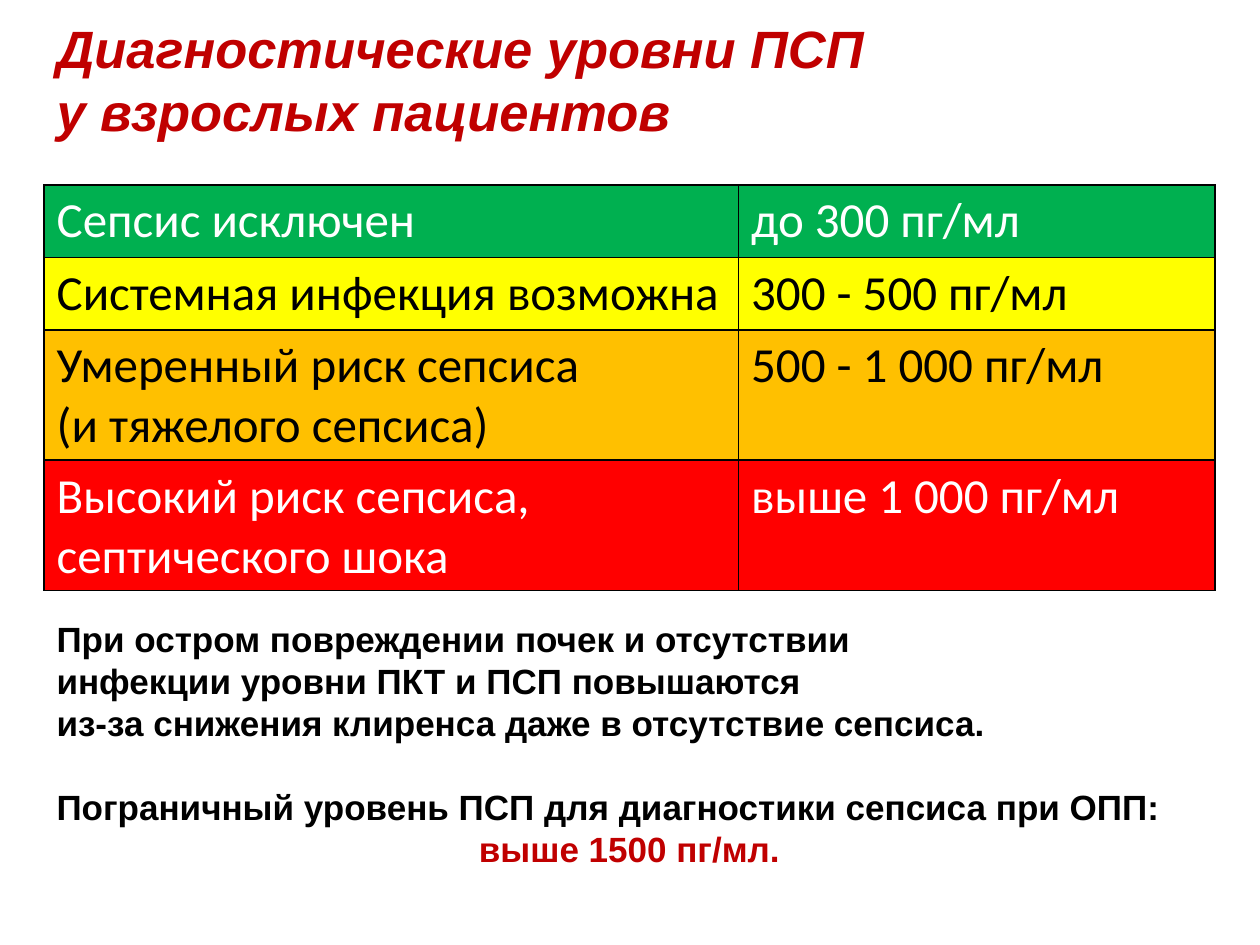
from lxml import etree
from pptx import Presentation
from pptx.dml.color import RGBColor
from pptx.enum.text import MSO_ANCHOR, PP_ALIGN
from pptx.oxml.ns import qn
from pptx.util import Cm, Pt

MIDDLE = MSO_ANCHOR.MIDDLE
TOP = MSO_ANCHOR.TOP
CENTER = PP_ALIGN.CENTER

COLORS = {
    "green": "00B050",
    "yellow": "FFFF00",
    "orange": "FFC000",
    "red": "FF0000",
    "accent": "C00000",
    "black": "000000",
    "white": "FFFFFF",
}

LEFT = Cm(0.89)
CONTENT_WIDTH = Cm(23.6)
COLUMN_WIDTHS = (Cm(14), Cm(9.6))
ONE_LINE, TWO_LINES = Cm(1.46), Cm(2.62)

# Risk level, PSP range, row height, fill, text colour
LEVELS = [
    ("Сепсис исключен", "до 300 пг/мл", ONE_LINE, "green", "white"),
    ("Системная инфекция возможна", "300 - 500 пг/мл", ONE_LINE, "yellow", "black"),
    ("Умеренный риск сепсиса\n(и тяжелого сепсиса)", "500 - 1 000 пг/мл",
     TWO_LINES, "orange", "black"),
    ("Высокий риск сепсиса, септического шока", "выше 1 000 пг/мл",
     TWO_LINES, "red", "white"),
]

NOTES = "\n".join([
    "При остром повреждении почек и отсутствии",
    "инфекции уровни ПКТ и ПСП повышаются",
    "из-за снижения клиренса даже в отсутствие сепсиса.",
    "Пограничный уровень ПСП для диагностики сепсиса при ОПП:",
    "выше 1500 пг/мл.",
])


def rgb(name):
    return RGBColor.from_string(COLORS[name])


def format_text(frame, font, size, color, bold=False, italic=False):
    for para in frame.paragraphs:
        for span in para.runs:
            span.font.name = font
            span.font.size = Pt(size)
            span.font.bold = bold
            span.font.italic = italic
            span.font.color.rgb = rgb(color)


def add_text(page, text, top, width, height, size, color, anchor=TOP, italic=False):
    box = page.shapes.add_textbox(LEFT, top, width, height)
    frame = box.text_frame
    frame.word_wrap = True
    frame.vertical_anchor = anchor
    frame.text = text
    format_text(frame, "Arial", size, color, bold=True, italic=italic)
    return frame


def add_borders(cell):
    properties = cell._tc.get_or_add_tcPr()
    for index, side in enumerate(("a:lnL", "a:lnR", "a:lnT", "a:lnB")):
        line = etree.Element(qn(side), w=str(Pt(1)))
        fill = etree.SubElement(line, qn("a:solidFill"))
        etree.SubElement(fill, qn("a:srgbClr"), val=COLORS["black"])
        properties.insert(index, line)


def add_levels_table(page):
    height = sum(level[2] for level in LEVELS)
    table = page.shapes.add_table(
        len(LEVELS), len(COLUMN_WIDTHS), LEFT, Cm(3.73), CONTENT_WIDTH, height).table
    for column, width in zip(table.columns, COLUMN_WIDTHS):
        column.width = width
    for row, (risk, limits, row_height, fill, color) in zip(table.rows, LEVELS):
        row.height = row_height
        for cell, text in zip(row.cells, (risk, limits)):
            cell.text_frame.text = text
            format_text(cell.text_frame, "Calibri", 28, color)
            cell.fill.solid()
            cell.fill.fore_color.rgb = rgb(fill)
            add_borders(cell)


def add_notes(page):
    frame = add_text(page, NOTES, Cm(12.32), CONTENT_WIDTH, Cm(5.38), 20, "black")
    threshold, value = frame.paragraphs[-2:]
    threshold.space_before = Pt(24)
    value.alignment = CENTER
    value.runs[0].font.color.rgb = rgb("accent")


def main():
    deck = Presentation()
    deck.slide_width, deck.slide_height = Cm(25.4), Cm(19.05)
    page = deck.slides.add_slide(deck.slide_layouts[6])

    # Title, with a line break inside one paragraph
    add_text(page, "Диагностические уровни ПСП\vу взрослых пациентов",
             Cm(0), Cm(22.86), Cm(3.18), 30, "accent", MIDDLE, italic=True)
    # Diagnostic levels
    add_levels_table(page)
    # Remarks on kidney injury
    add_notes(page)

    deck.save("out.pptx")


if __name__ == "__main__":
    main()
